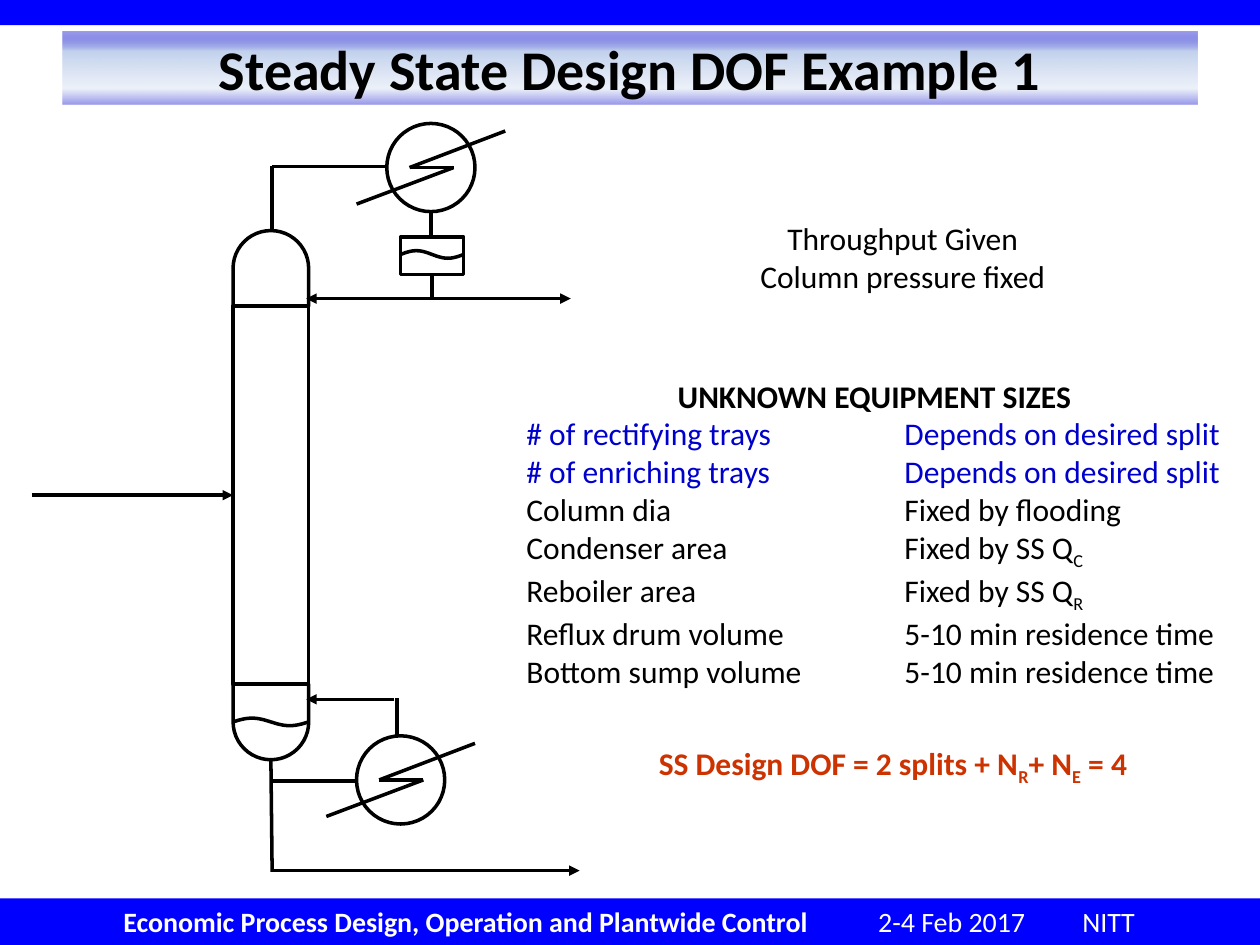
import math

from lxml import etree
from pptx import Presentation
from pptx.dml.color import RGBColor
from pptx.enum.shapes import MSO_CONNECTOR, MSO_SHAPE
from pptx.enum.text import MSO_ANCHOR, MSO_AUTO_SIZE, PP_ALIGN
from pptx.oxml import parse_xml
from pptx.oxml.ns import nsdecls, qn
from pptx.util import Inches, Pt

RECTANGLE = MSO_SHAPE.RECTANGLE
OVAL = MSO_SHAPE.OVAL
DELAY = MSO_SHAPE.FLOWCHART_DELAY
STRAIGHT = MSO_CONNECTOR.STRAIGHT
LEFT, CENTER = PP_ALIGN.LEFT, PP_ALIGN.CENTER
MIDDLE = MSO_ANCHOR.MIDDLE
FIT_SHAPE = MSO_AUTO_SIZE.SHAPE_TO_FIT_TEXT

FONT = "Calibri"
BLACK, WHITE = "000000", "FFFFFF"
BAND_BLUE, TEXT_BLUE, RED = "0000FF", "0000CC", "CC3300"
LINE_WIDTH = 2
TITLE_STOPS = [(1, "0000CC", 39), (27, "C2D1ED", 100),
               (78, "D2DDF1", 40), (100, "0000CC", 40)]
EQUIPMENT = [
    ("# of rectifying trays", "Depends on desired split", TEXT_BLUE),
    ("# of enriching trays", "Depends on desired split", TEXT_BLUE),
    ("Column dia", "Fixed by flooding", BLACK),
    ("Condenser area", "Fixed by SS Q|C|", BLACK),
    ("Reboiler area", "Fixed by SS Q|R|", BLACK),
    ("Reflux drum volume", "5-10 min residence time", BLACK),
    ("Bottom sump volume", "5-10 min residence time", BLACK),
]


def rgb(color):
    """Turn a hex string into a colour."""
    return RGBColor.from_string(color)


def add_spans(para, text, size=18, color=BLACK, bold=False):
    """Add text to a paragraph; parts between bars become subscripts."""
    for index, part in enumerate(text.split("|")):
        if not part:
            continue
        span = para.add_run()
        span.text = part
        span.font.name = FONT
        span.font.size = Pt(size)
        span.font.bold = bold
        span.font.color.rgb = rgb(color)
        if index % 2:
            span.font._rPr.set("baseline", "-25000")


def add_para(frame, text, align=LEFT, tabs=(), **style):
    """Add a paragraph, reusing the first one while it is empty."""
    first = frame.paragraphs[0]
    para = frame.add_paragraph() if first.runs else first
    para.alignment = align
    if tabs:
        tab_list = etree.SubElement(para._p.get_or_add_pPr(), qn("a:tabLst"))
        for stop in tabs:
            etree.SubElement(tab_list, qn("a:tab"), pos=str(Inches(stop)), algn="l")
    add_spans(para, text, **style)
    return para


def add_text_box(page, left, top, width, height):
    """Add an unwrapped text box and return its frame."""
    box = page.shapes.add_textbox(Inches(left), Inches(top), Inches(width), Inches(height))
    box.text_frame.word_wrap = False
    box.text_frame.auto_size = FIT_SHAPE
    return box.text_frame


def add_outline(shape):
    """Give a shape a plain black outline without fill."""
    shape.shadow.inherit = False
    shape.fill.background()
    shape.line.color.rgb = rgb(BLACK)
    shape.line.width = Pt(LINE_WIDTH)


def add_vessel(page, kind, left, top, width, height, rotation=0):
    """Add an outlined preset shape."""
    shape = page.shapes.add_shape(kind, Inches(left), Inches(top), Inches(width), Inches(height))
    add_outline(shape)
    shape.rotation = rotation


def add_band(page, left, top, width, height, color=BAND_BLUE):
    """Add a filled rectangle without outline."""
    band = page.shapes.add_shape(RECTANGLE, Inches(left), Inches(top), Inches(width), Inches(height))
    band.shadow.inherit = False
    band.fill.solid()
    band.fill.fore_color.rgb = rgb(color)
    band.line.fill.background()
    band.text_frame.vertical_anchor = MIDDLE
    return band


def set_gradient(shape, stops):
    """Replace a solid fill with a vertical gradient of (position, colour, opacity) stops."""
    marks = "".join(
        f'<a:gs pos="{position * 1000}"><a:srgbClr val="{color}">'
        f'<a:alpha val="{opacity * 1000}"/></a:srgbClr></a:gs>'
        for position, color, opacity in stops)
    gradient = parse_xml(f'<a:gradFill {nsdecls("a")} rotWithShape="1"><a:gsLst>{marks}</a:gsLst>'
                         '<a:lin ang="5400000" scaled="1"/></a:gradFill>')
    properties = shape._element.spPr
    properties.replace(properties.find(qn("a:solidFill")), gradient)


def add_pipe(page, start, end, arrows=()):
    """Add a line, with arrowheads at the named ends."""
    pipe = page.shapes.add_connector(STRAIGHT, *(Inches(value) for value in (*start, *end)))
    pipe.line.color.rgb = rgb(BLACK)
    pipe.line.width = Pt(LINE_WIDTH)
    for name in arrows:
        etree.SubElement(pipe.line._get_or_add_ln(), qn(f"a:{name}"), type="triangle")
    etree.SubElement(pipe._element.spPr, qn("a:effectLst"))


def add_liquid_level(page, left, middle, width, steps=32):
    """Add one sine wave as a liquid surface."""
    points = [(Inches(left + width * step / steps),
               Inches(middle - 0.03 * math.sin(2 * math.pi * step / steps)))
              for step in range(steps + 1)]
    builder = page.shapes.build_freeform(*points[0])
    builder.add_line_segments(points[1:], close=False)
    add_outline(builder.convert_to_shape())


def add_exchanger(page, left, top):
    """Add a heat exchanger: a circle crossed by a zigzag."""
    add_vessel(page, OVAL, left, top, 0.7, 0.7)
    zigzag = [(0.94, 0.06), (0.18, 0.35), (0.53, 0.35), (-0.24, 0.64)]
    corners = [(left + x, top + y) for x, y in zigzag]
    for start, end in zip(corners, corners[1:]):
        add_pipe(page, start, end)


def add_column(page):
    """Draw the column with its sump and feed."""
    add_vessel(page, RECTANGLE, 1.85, 2.43, 0.6, 3)
    add_vessel(page, DELAY, 1.85, 1.83, 0.6, 0.6, rotation=270)
    add_vessel(page, DELAY, 1.85, 5.43, 0.6, 0.6, rotation=90)
    add_liquid_level(page, 1.85, 5.73, 0.6)
    add_pipe(page, (0.25, 3.93), (1.85, 3.93), ["tailEnd"])


def add_condenser(page):
    """Draw the condenser, reflux drum and distillate lines."""
    add_exchanger(page, 3.07, 0.98)
    add_pipe(page, (2.16, 1.82), (2.16, 1.32))
    add_pipe(page, (2.16, 1.32), (3.06, 1.32))
    add_pipe(page, (3.42, 1.68), (3.42, 1.87))
    add_vessel(page, RECTANGLE, 3.18, 1.88, 0.5, 0.3)
    add_liquid_level(page, 3.18, 2.02, 0.5)
    add_pipe(page, (3.43, 2.18), (3.43, 2.36))
    add_pipe(page, (2.43, 2.37), (4.53, 2.37), ["headEnd", "tailEnd"])


def add_reboiler(page):
    """Draw the reboiler and bottoms lines."""
    add_exchanger(page, 2.83, 5.84)
    add_pipe(page, (2.15, 6.04), (2.16, 6.92))
    add_pipe(page, (2.16, 6.91), (4.6, 6.91), ["tailEnd"])
    add_pipe(page, (2.16, 6.2), (2.83, 6.2))
    add_pipe(page, (3.15, 5.54), (3.15, 5.84))
    add_pipe(page, (3.13, 5.55), (2.43, 5.55), ["tailEnd"])


def add_frame(page):
    """Add the top band, footer and title."""
    add_band(page, 0, 0, 10, 0.2)
    footer = add_band(page, 0, 7.13, 10, 0.37).text_frame
    footer.margin_left = Inches(0.98)
    para = add_para(footer, "Economic Process Design, Operation and Plantwide Control",
                    tabs=(5.99, 7.61), size=16, color=WHITE, bold=True)
    add_spans(para, "\t2-4 Feb 2017\tNITT", size=16, color=WHITE)
    title = add_band(page, 0.5, 0.25, 9, 0.58)
    set_gradient(title, TITLE_STOPS)
    add_para(title.text_frame, "Steady State Design DOF Example 1", align=CENTER, size=32, bold=True)


def add_notes(page):
    """Add the text beside the flowsheet."""
    given = add_text_box(page, 5.92, 1.69, 2.49, 0.71)
    for text in ("Throughput Given", "Column pressure fixed"):
        add_para(given, text, align=CENTER)
    sizes = add_text_box(page, 4.08, 2.94, 5.72, 2.52)
    add_para(sizes, "UNKNOWN EQUIPMENT SIZES", align=CENTER, bold=True)
    for item, rule, color in EQUIPMENT:
        add_para(sizes, f"{item}\t{rule}", tabs=(3,), color=color)
    result = add_text_box(page, 5.13, 5.86, 3.98, 0.4)
    add_para(result, "SS Design DOF = 2 splits + N|R|+ N|E| = 4", color=RED, bold=True)


def main():
    """Build the slide and save it."""
    deck = Presentation()
    deck.slide_width, deck.slide_height = Inches(10), Inches(7.5)
    page = deck.slides.add_slide(deck.slide_layouts[6])
    for add_part in (add_frame, add_column, add_condenser, add_reboiler, add_notes):
        add_part(page)
    deck.save("out.pptx")


if __name__ == "__main__":
    main()
